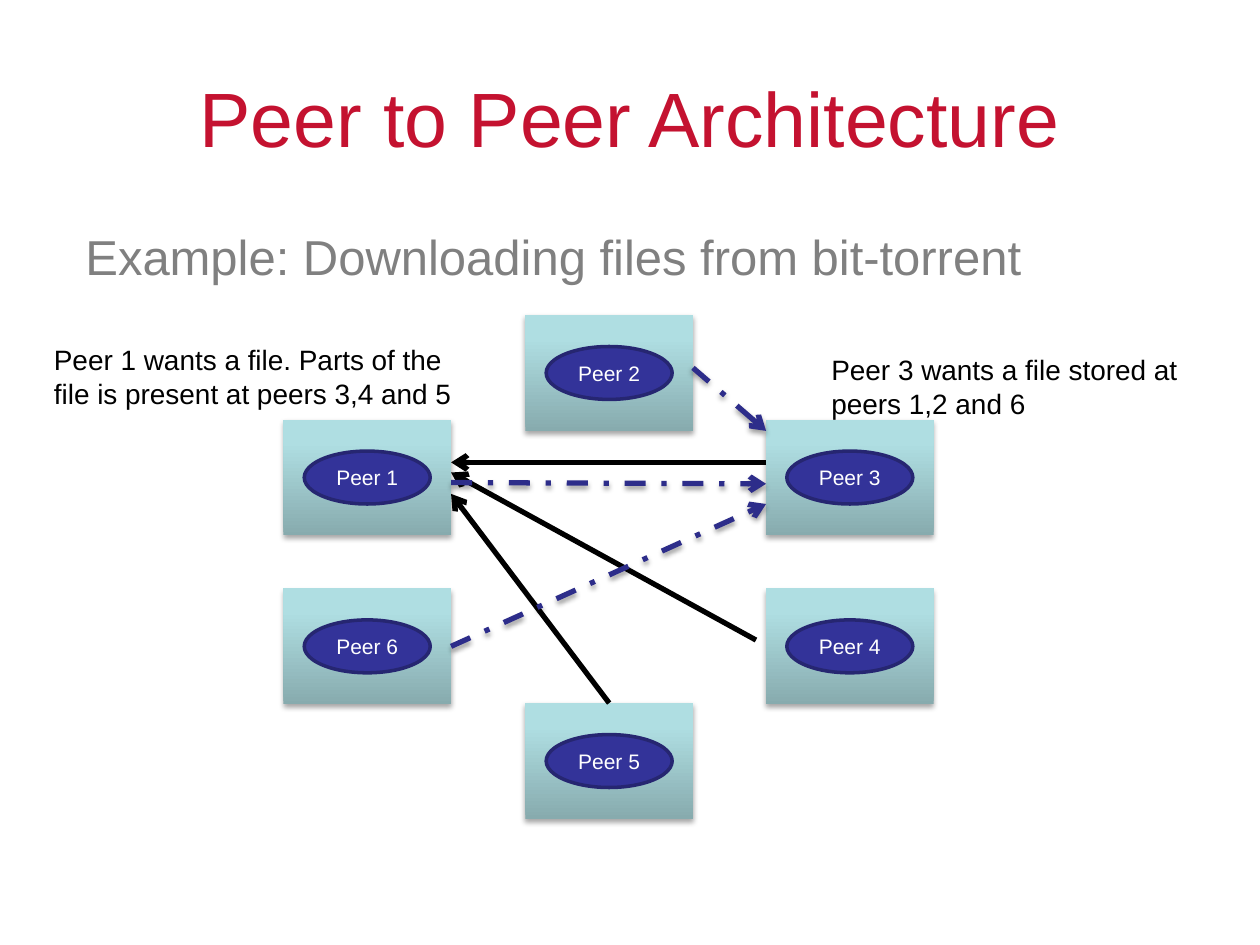
from lxml import etree
from pptx import Presentation
from pptx import util as u
from pptx.dml.color import RGBColor
from pptx.enum import dml, shapes, text
from pptx.oxml import parse_xml
from pptx.oxml.ns import nsdecls, qn

COLORS = {
    "title": "C41230", "subtitle": "808080", "black": "000000", "white": "FFFFFF",
    "oval": "333399", "oval_line": "262671", "request": "2D2D8A",
    "box_bottom": "87ABAE", "box_middle": "AFDEE2", "box_top": "AFE0E4",
}
BOX_W, BOX_H = 1.33, 0.92
OVAL_W, OVAL_H = 1, 0.42
PEERS = {  # number: left, top of the box
    2: (4.17, 2.5), 6: (2.25, 4.67), 1: (2.25, 3.33),
    3: (6.08, 3.33), 4: (6.08, 4.67), 5: (4.17, 5.58),
}
TOP, RIGHT = 0, 3


def rgb(name):
    return RGBColor.from_string(COLORS[name])


def write(frame, content, size, color, align=text.PP_ALIGN.LEFT,
          anchor=text.MSO_ANCHOR.TOP, hanging=0):
    frame.word_wrap = True
    frame.vertical_anchor = anchor
    paragraph = frame.paragraphs[0]
    paragraph.alignment = align
    if hanging:
        props = paragraph._p.get_or_add_pPr()
        props.set("marL", str(u.Inches(hanging)))
        props.set("indent", str(-u.Inches(hanging)))
    run = paragraph.add_run()
    run.text = content
    run.font.name = "Arial"
    run.font.size = u.Pt(size)
    run.font.color.rgb = rgb(color)


def add_label(slide, box, content, size, color, **layout):
    label = slide.shapes.add_textbox(*map(u.Inches, box))
    write(label.text_frame, content, size, color, **layout)


def add_shadow(properties, opacity):
    properties.append(parse_xml(
        f'<a:effectLst {nsdecls("a")}>'
        f'<a:outerShdw blurRad="{u.Pt(3.1)}" dist="{u.Pt(1.8)}" dir="5400000" rotWithShape="0">'
        f'<a:srgbClr val="{COLORS["black"]}"><a:alpha val="{opacity * 1000}"/></a:srgbClr>'
        '</a:outerShdw></a:effectLst>'))


def add_gradient(properties):
    stops = ((0, "box_bottom"), (80, "box_middle"), (100, "box_top"))
    stop_xml = "".join(f'<a:gs pos="{pos * 1000}"><a:srgbClr val="{COLORS[name]}"/></a:gs>'
                       for pos, name in stops)
    properties.append(parse_xml(
        f'<a:gradFill {nsdecls("a")} rotWithShape="1"><a:gsLst>{stop_xml}</a:gsLst>'
        '<a:lin ang="16200000" scaled="0"/></a:gradFill>'))


def add_peer(slide, number, left, top):
    """Group a shaded box with the named oval; return the box."""
    group = slide.shapes.add_group_shape()
    box = group.shapes.add_shape(
        shapes.MSO_SHAPE.RECTANGLE, *map(u.Inches, (left, top, BOX_W, BOX_H)))
    add_gradient(box._element.spPr)
    box.line.fill.background()
    add_shadow(box._element.spPr, 35)

    oval_box = (left + (BOX_W - OVAL_W) / 2, top + (BOX_H - OVAL_H) / 2, OVAL_W, OVAL_H)
    oval = group.shapes.add_shape(shapes.MSO_SHAPE.OVAL, *map(u.Inches, oval_box))
    oval.shadow.inherit = False
    oval.fill.solid()
    oval.fill.fore_color.rgb = rgb("oval")
    oval.line.color.rgb = rgb("oval_line")
    oval.line.width = u.Pt(2)
    write(oval.text_frame, f"Peer {number}", 12, "white",
          align=text.PP_ALIGN.CENTER, anchor=text.MSO_ANCHOR.MIDDLE)
    return box


def add_arrow(slide, start, end, dashed=False):
    arrow = slide.shapes.add_connector(
        shapes.MSO_CONNECTOR.STRAIGHT, *map(u.Inches, (*start, *end)))
    arrow.line.width = u.Pt(3)
    arrow.line.color.rgb = rgb("request" if dashed else "black")
    if dashed:
        arrow.line.dash_style = dml.MSO_LINE.DASH_DOT
    etree.SubElement(arrow.line._get_or_add_ln(), qn("a:tailEnd"), type="arrow")
    if dashed:
        add_shadow(arrow._element.spPr, 38)
    else:
        etree.SubElement(arrow._element.spPr, qn("a:effectLst"))
    return arrow


def add_network(slide):
    boxes = {number: add_peer(slide, number, *place) for number, place in PEERS.items()}
    left_edge = PEERS[1][0] + BOX_W   # right side of peers 1 and 6
    right_edge = PEERS[3][0]          # left side of peers 3 and 4

    # Parts sent to peer 1
    add_arrow(slide, (right_edge, 3.67), (left_edge, 3.67))
    add_arrow(slide, (6, 5.08), (left_edge, 3.75))
    from_peer5 = add_arrow(slide, (4.83, 5.58), (left_edge, 3.92))
    from_peer5.begin_connect(boxes[5], TOP)

    # Parts sent to peer 3
    from_peer6 = add_arrow(slide, (left_edge, 5.13), (right_edge, 4), dashed=True)
    from_peer6.begin_connect(boxes[6], RIGHT)
    add_arrow(slide, (PEERS[2][0] + BOX_W, 2.92), (right_edge, 3.42), dashed=True)
    add_arrow(slide, (left_edge, 3.83), (right_edge, 3.84), dashed=True)


def main():
    deck = Presentation()
    deck.slide_width, deck.slide_height = u.Inches(10), u.Inches(7.5)
    slide = deck.slides.add_slide(deck.slide_layouts[6])

    # Headings
    add_label(slide, (0.5, 0.3, 9, 1.25), "Peer to Peer Architecture", 44, "title",
              align=text.PP_ALIGN.CENTER, anchor=text.MSO_ANCHOR.MIDDLE)
    add_label(slide, (0.58, 1.75, 9, 4.95), "Example: Downloading files from bit-torrent",
              28, "subtitle", hanging=0.38)

    add_network(slide)

    # Notes beside peers 1 and 3
    add_label(slide, (0.33, 2.67, 3.5, 0.64),
              "Peer 1 wants a file. Parts of the file is present at peers 3,4 and 5", 16, "black")
    add_label(slide, (6.5, 2.75, 3, 0.64),
              "Peer 3 wants a file stored at peers 1,2 and 6", 16, "black")

    deck.save("out.pptx")


if __name__ == "__main__":
    main()
